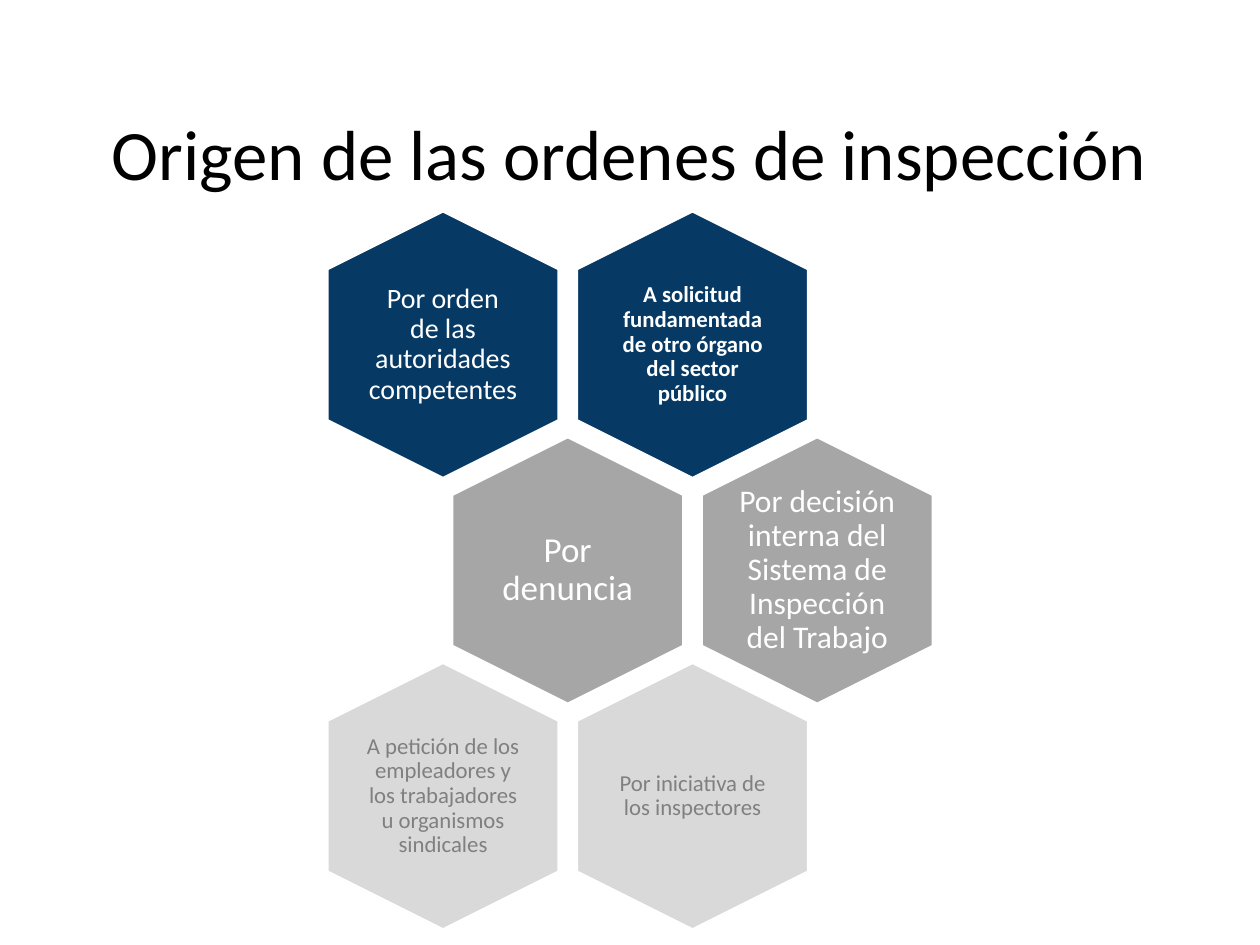
from pptx import Presentation
from pptx.dml.color import RGBColor
from pptx.enum.shapes import MSO_SHAPE as Shape
from pptx.enum.text import MSO_ANCHOR as Anchor, PP_ALIGN as Align
from pptx.util import Cm, Pt

TITLE = "Origen de las ordenes de inspección"
FONT = "Calibri"
ROWS = [
    {"fill": "063964", "color": "FFFFFF", "shift": 0, "cells": [
        ("Por orden\vde las autoridades competentes", 16, False, 0),
        ("A solicitud fundamentada de otro órgano del sector público", 13, True, 0.13)]},
    {"fill": "A6A6A6", "color": "FFFFFF", "shift": 0.5, "cells": [
        ("Por denuncia", 20, False, 0.2),
        ("Por decisión interna del Sistema de Inspección del Trabajo", 18, False, 0)]},
    {"fill": "D9D9D9", "color": "808080", "shift": 0, "cells": [
        ("A petición de los empleadores y los trabajadores u organismos sindicales",
         13, False, 0),
        ("Por iniciativa de los inspectores", 13, False, 0.13)]},
]
FIRST_X, FIRST_Y = 8.93, 6.95
PITCH_X, PITCH_Y = 5.03, 4.55
HEXAGON_SIZE = (5.36, 4.65)
LABEL_SIZE = (3.2, 3.68)


def rgb(value):
    return RGBColor.from_string(value)


def centred_box(x, y, size):
    width, height = size
    return Cm(x - width / 2), Cm(y - height / 2), Cm(width), Cm(height)


def write(frame, text, size, color, bold, anchor, spacing, inset):
    frame.word_wrap = True
    frame.vertical_anchor = anchor
    frame.margin_left = frame.margin_right = Cm(inset)
    frame.margin_top = frame.margin_bottom = Cm(inset)
    frame.text = text
    paragraph = frame.paragraphs[0]
    paragraph.alignment = Align.CENTER
    paragraph.line_spacing = spacing
    for run in paragraph.runs:
        run.font.name = FONT
        run.font.size = Pt(size)
        run.font.bold = bold
        run.font.color.rgb = rgb(color)


def add_cell(slide, x, y, row, cell):
    text, size, bold, inset = cell
    group = slide.shapes.add_group_shape()
    hexagon = group.shapes.add_shape(Shape.HEXAGON, *centred_box(x, y, HEXAGON_SIZE))
    hexagon.rotation = 90
    hexagon.adjustments[0] = 0.25
    hexagon.shadow.inherit = False
    hexagon.fill.solid()
    hexagon.fill.fore_color.rgb = rgb(row["fill"])
    hexagon.line.color.rgb = rgb("FFFFFF")
    hexagon.line.width = Pt(1)
    label = group.shapes.add_textbox(*centred_box(x, y, LABEL_SIZE))
    write(label.text_frame, text, size, row["color"], bold, Anchor.MIDDLE, 0.9, inset)


def main():
    """Build the slide on the origins of inspection orders."""
    presentation = Presentation()
    presentation.slide_width, presentation.slide_height = Cm(25.4), Cm(19.05)
    slide = presentation.slides.add_slide(presentation.slide_layouts[5])
    title = slide.shapes.title
    title.left, title.top, title.width, title.height = Cm(1.27), Cm(2.34), Cm(22.86), Cm(1.55)
    write(title.text_frame, TITLE, 40.5, "000000", False, Anchor.BOTTOM, 0.7, 0)
    for row_index, row in enumerate(ROWS):
        y = FIRST_Y + row_index * PITCH_Y
        for column, cell in enumerate(row["cells"]):
            x = FIRST_X + (column + row["shift"]) * PITCH_X
            add_cell(slide, x, y, row, cell)
    presentation.save("out.pptx")


if __name__ == "__main__":
    main()
